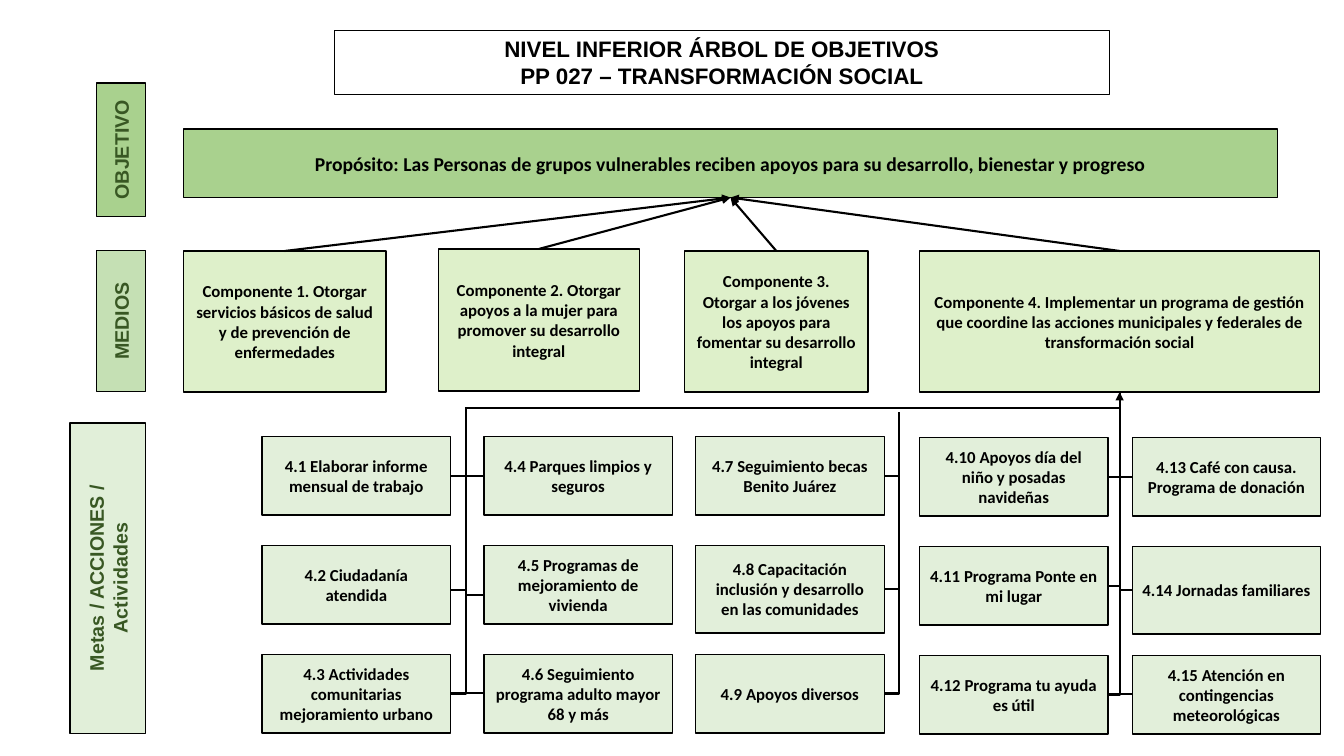
import pptx
import pptx.util
import pptx.dml.color
import pptx.enum.shapes
import pptx.enum.text
import pptx.oxml.ns
import lxml.etree

Inches, Pt = pptx.util.Inches, pptx.util.Pt
STRAIGHT = pptx.enum.shapes.MSO_CONNECTOR.STRAIGHT
ELBOW = pptx.enum.shapes.MSO_CONNECTOR.ELBOW
TOP, LEFT, BOTTOM, RIGHT = range(4)

# Content
TITLE = ["NIVEL INFERIOR ÁRBOL DE OBJETIVOS", "PP 027 – TRANSFORMACIÓN SOCIAL"]
PURPOSE = ("Propósito: Las Personas de grupos vulnerables reciben apoyos "
           "para su desarrollo, bienestar y progreso")

# Level label: text, left, top, width, height before rotation, fill, opacity %
LEVELS = [
    ("OBJETIVO", 0.54, 1.24, 1.32, 0.49, "A9D18E", 100),
    ("MEDIOS", 0.5, 2.94, 1.4, 0.49, "C5E0B4", 100),
    ("Metas / ACCIONES / Actividades", -0.47, 5.36, 3.08, 0.75, "C5E0B4", 50),
]

# Component: text, left, top, width, height
COMPONENTS = [
    ("Componente 1. Otorgar servicios básicos de salud y de prevención de enfermedades",
     1.82, 2.49, 2.01, 1.4),
    ("Componente 2. Otorgar apoyos a la mujer para promover su desarrollo integral",
     4.35, 2.47, 1.99, 1.41),
    ("Componente 3. Otorgar a los jóvenes los apoyos para fomentar su desarrollo integral",
     6.79, 2.49, 1.82, 1.4),
    ("Componente 4. Implementar un programa de gestión que coordine las acciones "
     "municipales y federales de transformación social",
     9.12, 2.49, 3.97, 1.4),
]

# Activity column: left, first top, trunk x, side facing the trunk,
# then each text with the height its branch climbs to on the trunk
ACTIVITIES = [
    (2.6, 4.33, 4.62, RIGHT, [
        ("4.1 Elaborar informe mensual de trabajo", 4.08),
        ("4.2 Ciudadanía atendida", 4.21),
        ("4.3 Actividades comunitarias mejoramiento urbano", 4.19)]),
    (4.8, 4.33, 4.62, LEFT, [
        ("4.4 Parques limpios y seguros", 4.07),
        ("4.5 Programas de mejoramiento de vivienda", 4.49),
        ("4.6 Seguimiento programa adulto mayor 68 y más", 4.05)]),
    (6.9, 4.33, 8.92, RIGHT, [
        ("4.7 Seguimiento becas Benito Juárez", 4.09),
        ("4.8 Capacitación inclusión y desarrollo en las comunidades", 4.21),
        ("4.9 Apoyos diversos", 4.19)]),
    (9.12, 4.34, 11.11, RIGHT, [
        ("4.10 Apoyos día del niño y posadas navideñas", 4.49),
        ("4.11 Programa Ponte en mi lugar", 4.72),
        ("4.12 Programa tu ayuda es útil", 3.89)]),
    (11.23, 4.34, 11.11, LEFT, [
        ("4.13 Café con causa. Programa de donación", 4.34),
        ("4.14 Jornadas familiares", 4.21),
        ("4.15 Atención en contingencias meteorológicas", 4.06)]),
]
BOX_W, BOX_H, TALL_H, ROW_STEP = 1.87, 0.78, 0.87, 1.08
TALL = ("4.8", "4.14")
BRANCH_DROP = {"4.2": 0.05, "4.5": 0.1}  # branches that meet below the middle


def rgb(color):
    return pptx.dml.color.RGBColor.from_string(color)


def write(tf, lines, size, font, color="000000"):
    tf.word_wrap = True
    for i, line in enumerate(lines):
        p = tf.paragraphs[0] if i == 0 else tf.add_paragraph()
        p.alignment = pptx.enum.text.PP_ALIGN.CENTER
        r = p.add_run()
        r.text = line
        r.font.size, r.font.name, r.font.bold = Pt(size), font, True
        r.font.color.rgb = rgb(color)


def outline(sp, width):
    sp.line.color.rgb = rgb("000000")
    sp.line.width = Pt(width)


def add_box(text, x, y, w, h, fill, opacity=100, size=12, font="Calibri", color="000000"):
    sp = s.shapes.add_shape(pptx.enum.shapes.MSO_SHAPE.FLOWCHART_PROCESS,
                            Inches(x), Inches(y), Inches(w), Inches(h))
    sp.shadow.inherit = False
    sp.fill.solid()
    sp.fill.fore_color.rgb = rgb(fill)
    if opacity < 100:
        clr = sp.fill._xPr.find(".//" + pptx.oxml.ns.qn("a:srgbClr"))
        lxml.etree.SubElement(clr, pptx.oxml.ns.qn("a:alpha"), val=str(opacity * 1000))
    outline(sp, 1)
    sp.text_frame.vertical_anchor = pptx.enum.text.MSO_ANCHOR.MIDDLE
    write(sp.text_frame, [text], size, font, color)
    return sp


def add_line(kind, x1, y1, x2, y2, start=None, end=None, arrow=False):
    """An elbow runs across, then up; start and end are (shape, side) pairs to join."""
    c = s.shapes.add_connector(kind, Inches(x1), Inches(y1), Inches(x2), Inches(y2))
    if kind == ELBOW:
        c._element.spPr.find(pptx.oxml.ns.qn("a:prstGeom")).set("prst", "bentConnector2")
    if start:
        c.begin_connect(*start)
    if end:
        c.end_connect(*end)
    outline(c, 1.5)
    if arrow:
        lxml.etree.SubElement(c.line._get_or_add_ln(), pptx.oxml.ns.qn("a:tailEnd"),
                              type="triangle")
    lxml.etree.SubElement(c._element.spPr, pptx.oxml.ns.qn("a:effectLst"))


prs = pptx.Presentation()
prs.slide_width, prs.slide_height = Inches(13.33), Inches(7.5)
s = prs.slides.add_slide(prs.slide_layouts[5])

# Title
title = s.shapes.title
title.left, title.top, title.width, title.height = map(Inches, (3.32, 0.3, 7.68, 0.64))
outline(title, 0.75)
title.text_frame.vertical_anchor = pptx.enum.text.MSO_ANCHOR.TOP
write(title.text_frame, TITLE, 16, "Arial")

# Level labels
for text, x, y, w, h, fill, opacity in LEVELS:
    add_box(text, x, y, w, h, fill, opacity, 14, "Arial", "385723").rotation = 270

# Purpose and the components that lead to it
purpose = add_box(PURPOSE, 1.82, 1.28, 10.85, 0.68, "A9D18E", size=14)
for text, x, y, w, h in COMPONENTS:
    component = add_box(text, x, y, w, h, "92D050", 30)
    add_line(STRAIGHT, x + w / 2, y, 7.24, 1.96, (component, TOP), (purpose, BOTTOM), True)

# Activities, each with a branch that climbs its trunk
for left, first_top, trunk_x, side, rows in ACTIVITIES:
    for row, (text, climb_y) in enumerate(rows):
        number = text.split()[0]
        y = first_top + row * ROW_STEP
        h = TALL_H if number in TALL else BOX_H
        box = add_box(text, left, y, BOX_W, h, "C5E0B4", 49)
        drop = BRANCH_DROP.get(number, 0)
        edge = left + BOX_W if side == RIGHT else left
        add_line(ELBOW, edge, y + h / 2 + drop, trunk_x, climb_y,
                 start=None if drop else (box, side))

# Bus that rises into the last component
add_line(ELBOW, 4.61, 4.05, 11.11, 3.89, end=(component, BOTTOM), arrow=True)

prs.save("out.pptx")
